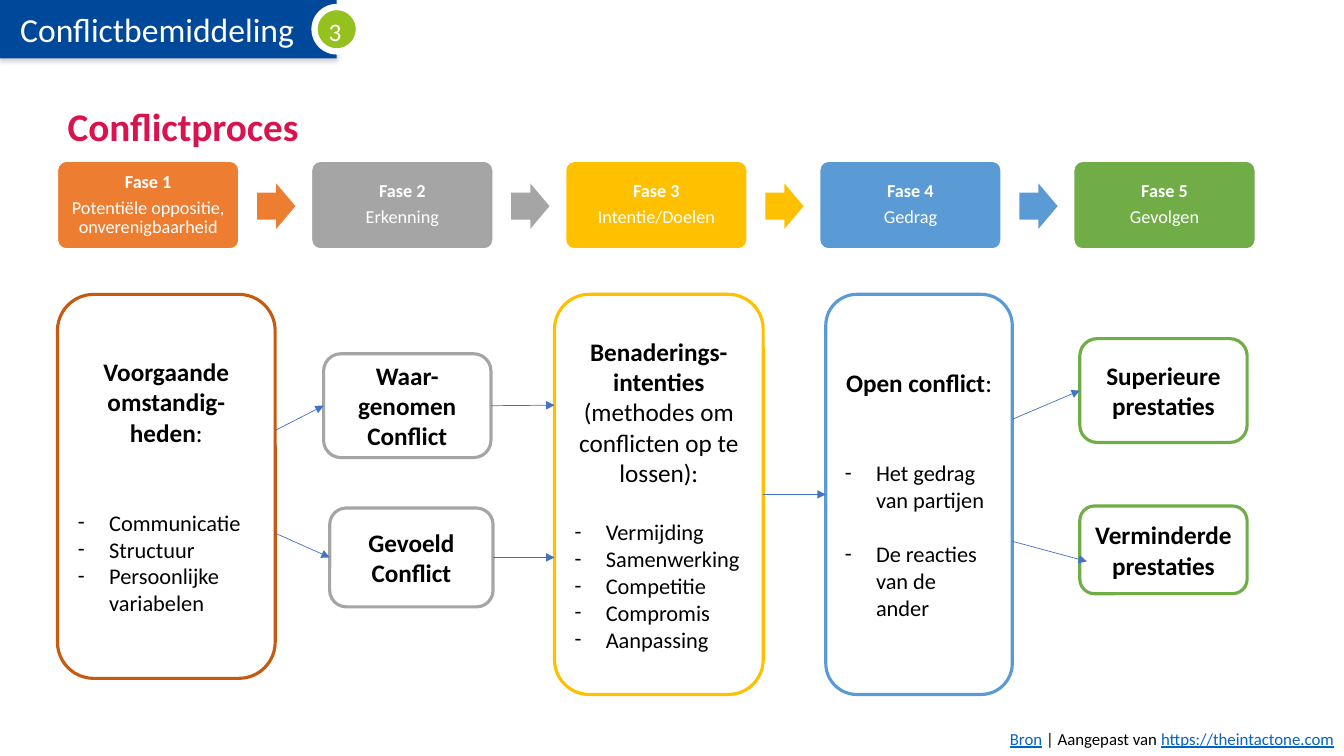
from lxml import etree
from pptx import Presentation
from pptx.dml.color import RGBColor
from pptx.enum.shapes import MSO_CONNECTOR, MSO_SHAPE
from pptx.enum.text import MSO_ANCHOR, MSO_AUTO_SIZE, PP_ALIGN
from pptx.oxml.ns import qn
from pptx.util import Pt

PX = 9144
RECT, OVAL = MSO_SHAPE.RECTANGLE, MSO_SHAPE.OVAL
ROUNDED, ARROW = MSO_SHAPE.ROUNDED_RECTANGLE, MSO_SHAPE.RIGHT_ARROW
CARD = MSO_SHAPE.FLOWCHART_ALTERNATE_PROCESS
STRAIGHT = MSO_CONNECTOR.STRAIGHT
LEFT, CENTER, RIGHT = PP_ALIGN.LEFT, PP_ALIGN.CENTER, PP_ALIGN.RIGHT
TOP, MIDDLE = MSO_ANCHOR.TOP, MSO_ANCHOR.MIDDLE
NO_AUTOFIT = MSO_AUTO_SIZE.NONE
LEFT_SIDE, RIGHT_SIDE = 1, 3
WHITE, BLACK, LINK = "FFFFFF", "000000", "0563C1"
ORANGE, GREY, YELLOW, BLUE, GREEN = "ED7D31", "A5A5A5", "FFC000", "5B9BD5", "70AD47"


def rgb(code):
    """Turn a hex string into a colour."""
    return RGBColor.from_string(code)


class ProcessSlide:
    """Hold the style and the current slide, and draw its elements."""

    font = "Calibri"
    connector_color = "4472C4"

    def __init__(self, presentation):
        """Add a title-only slide to the presentation."""
        self.slide = presentation.slides.add_slide(presentation.slide_layouts[5])
        self.shapes = self.slide.shapes

    def frame(self, shape, anchor=MIDDLE, insets=(10, 5, 10, 5)):
        """Prepare the text frame of a shape."""
        frame = shape.text_frame
        frame.word_wrap = True
        frame.auto_size = NO_AUTOFIT
        frame.vertical_anchor = anchor
        (frame.margin_left, frame.margin_top,
         frame.margin_right, frame.margin_bottom) = [inset * PX for inset in insets]
        return frame

    def paragraph(self, frame, parts, size, color=BLACK, align=CENTER,
                  before=0, spacing=1.0, bullet=False):
        """Write one paragraph of (text, bold) or (text, bold, link) parts."""
        first = frame.paragraphs[0]
        paragraph = frame.add_paragraph() if first.runs else first
        paragraph.alignment = align
        paragraph.space_before = Pt(before)
        paragraph.line_spacing = spacing
        if bullet:
            properties = paragraph._p.get_or_add_pPr()
            properties.set("marL", str(31 * PX))
            properties.set("indent", str(-31 * PX))
            etree.SubElement(properties, qn("a:buFont")).set("typeface", self.font)
            etree.SubElement(properties, qn("a:buChar")).set("char", "-")
        for text, bold, *link in parts:
            run = paragraph.add_run()
            run.text = text
            run.font.name = self.font
            run.font.size = Pt(size)
            run.font.bold = bold
            run.font.underline = bool(link)
            run.font.color.rgb = rgb(LINK if link else color)

    def title(self, text, box, size, color):
        """Place and format the title placeholder."""
        title = self.shapes.title
        title.left, title.top, title.width, title.height = [v * PX for v in box]
        self.paragraph(self.frame(title), [(text, True)], size, color, LEFT, spacing=0.9)

    def shape(self, kind, box, fill, line=None, weight=1, adjustments=()):
        """Draw a preset shape."""
        shape = self.shapes.add_shape(kind, *[v * PX for v in box])
        shape.shadow.inherit = False
        shape.fill.solid()
        shape.fill.fore_color.rgb = rgb(fill)
        if line:
            shape.line.color.rgb = rgb(line)
            shape.line.width = Pt(weight)
        else:
            shape.line.fill.background()
        for index, value in enumerate(adjustments):
            shape.adjustments[index] = value
        return shape

    def drop_shadow(self, shape, color, opacity, blur, distance):
        """Give a shape a soft shadow straight below it."""
        effects = shape._element.spPr.find(qn("a:effectLst"))
        shadow = etree.SubElement(effects, qn("a:outerShdw"), blurRad=str(Pt(blur)),
                                  dist=str(Pt(distance)), dir="5400000", rotWithShape="0")
        tint = etree.SubElement(shadow, qn("a:srgbClr"), val=color)
        etree.SubElement(tint, qn("a:alpha"), val=str(opacity * 1000))

    def text(self, box, parts, size, **style):
        """Add a one-paragraph text box."""
        label = self.shapes.add_textbox(*[v * PX for v in box])
        self.paragraph(self.frame(label, TOP), parts, size, **style)

    def card(self, box, line, headings, bullets=(), gap=0, between=0):
        """Draw an outlined card with headings and an optional dashed list."""
        card = self.shape(CARD, box, WHITE, line, 2.25)
        frame = self.frame(card)
        for parts in headings:
            self.paragraph(frame, parts, 18)
        for index, item in enumerate(bullets):
            self.paragraph(frame, [(item, False)], 16, align=LEFT,
                           before=between if index else gap, bullet=True)
        return card

    def arrow(self, start, end):
        """Connect two ends, each a point or a (card, side) pair."""
        free = [(0, 0) if hasattr(stop[0], "text_frame") else stop for stop in (start, end)]
        arrow = self.shapes.add_connector(STRAIGHT, *[v * PX for point in free for v in point])
        if free[0] != start:
            arrow.begin_connect(*start)
        if free[1] != end:
            arrow.end_connect(*end)
        arrow.line.color.rgb = rgb(self.connector_color)
        arrow.line.width = Pt(0.5)
        etree.SubElement(arrow.line._get_or_add_ln(), qn("a:tailEnd"), type="triangle")
        etree.SubElement(arrow._element.spPr, qn("a:effectLst"))


def main():
    """Build the conflict process slide."""
    presentation = Presentation()
    presentation.slide_width, presentation.slide_height = 1333 * PX, 750 * PX
    page = ProcessSlide(presentation)

    banner = page.shape(RECT, (0, 0, 334, 58), "004899")
    page.drop_shadow(banner, "808080", 35, 3.1, 1.8)
    page.paragraph(page.frame(banner, insets=(20, 5, 10, 5)),
                   [("Conflictbemiddeling", False)], 24, WHITE, LEFT)
    page.shape(OVAL, (312, 7, 44, 44), "95C11F", WHITE, 4.5)
    page.text((316, -4, 35, 51), [("3", False)], 18, color=WHITE, align=LEFT, spacing=1.5)
    page.title("Conflictproces", (57, 95, 1246, 66), 28, "D8134D")

    phases = [("Potentiële oppositie, onverenigbaarheid", ORANGE), ("Erkenning", GREY),
              ("Intentie/Doelen", YELLOW), ("Gedrag", BLUE), ("Gevolgen", GREEN)]
    for index, (phase, color) in enumerate(phases):
        left = 57 + 252 * index
        step = page.shape(ROUNDED, (left, 160, 180, 87), color, WHITE, 1, [0.1])
        frame = page.frame(step, insets=(5, 5, 5, 5))
        page.paragraph(frame, [(f"Fase {index + 1}", True)], 13, WHITE, spacing=0.9)
        page.paragraph(frame, [(phase, False)], 13, WHITE, before=4.5, spacing=0.9)
        if index < len(phases) - 1:
            page.shape(ARROW, (left + 198, 182, 38, 45), color, adjustments=[0.6, 0.5])

    page.card((57, 292, 216, 381), "C55A11",
              [[("Voorgaande omstandig-heden", True), (":", False)]],
              ["Communicatie", "Structuur", "Persoonlijke variabelen"], gap=44)
    perceived = page.card((321, 351, 166, 103), GREY, [[("Waar-genomen Conflict", True)]])
    felt = page.card((327, 504, 162, 98), GREY, [[("Gevoeld Conflict", True)]])
    intentions = page.card(
        (550, 292, 207, 397), YELLOW,
        [[("Benaderings- intenties", True)],
         [("(methodes om conflicten op te lossen):", False)]],
        ["Vermijding", "Samenwerking", "Competitie", "Compromis", "Aanpassing"], gap=22)
    open_conflict = page.card(
        (819, 292, 185, 397), BLUE, [[("Open conflict", True), (":", False)]],
        ["Het gedrag van partijen", "De reacties van de ander"], gap=44, between=19.5)
    superior = page.card((1071, 336, 166, 103), GREEN, [[("Superieure prestaties", True)]])
    page.card((1071, 502, 166, 87), GREEN, [[("Verminderde prestaties", True)]])

    page.text((374, 718, 959, 30),
              [("Bron", False, True), (" | Aangepast van ", False),
               ("https://theintactone.com", False, True)], 12, align=RIGHT)

    for start, end in [
        ((273, 427), (perceived, LEFT_SIDE)),
        ((273, 529), (felt, LEFT_SIDE)),
        ((perceived, RIGHT_SIDE), (550, 402)),
        ((felt, RIGHT_SIDE), (550, 553)),
        ((intentions, RIGHT_SIDE), (open_conflict, LEFT_SIDE)),
        ((1004, 416), (superior, LEFT_SIDE)),
        ((1004, 537), (1078, 557)),
    ]:
        page.arrow(start, end)

    presentation.save("out.pptx")


if __name__ == "__main__":
    main()
